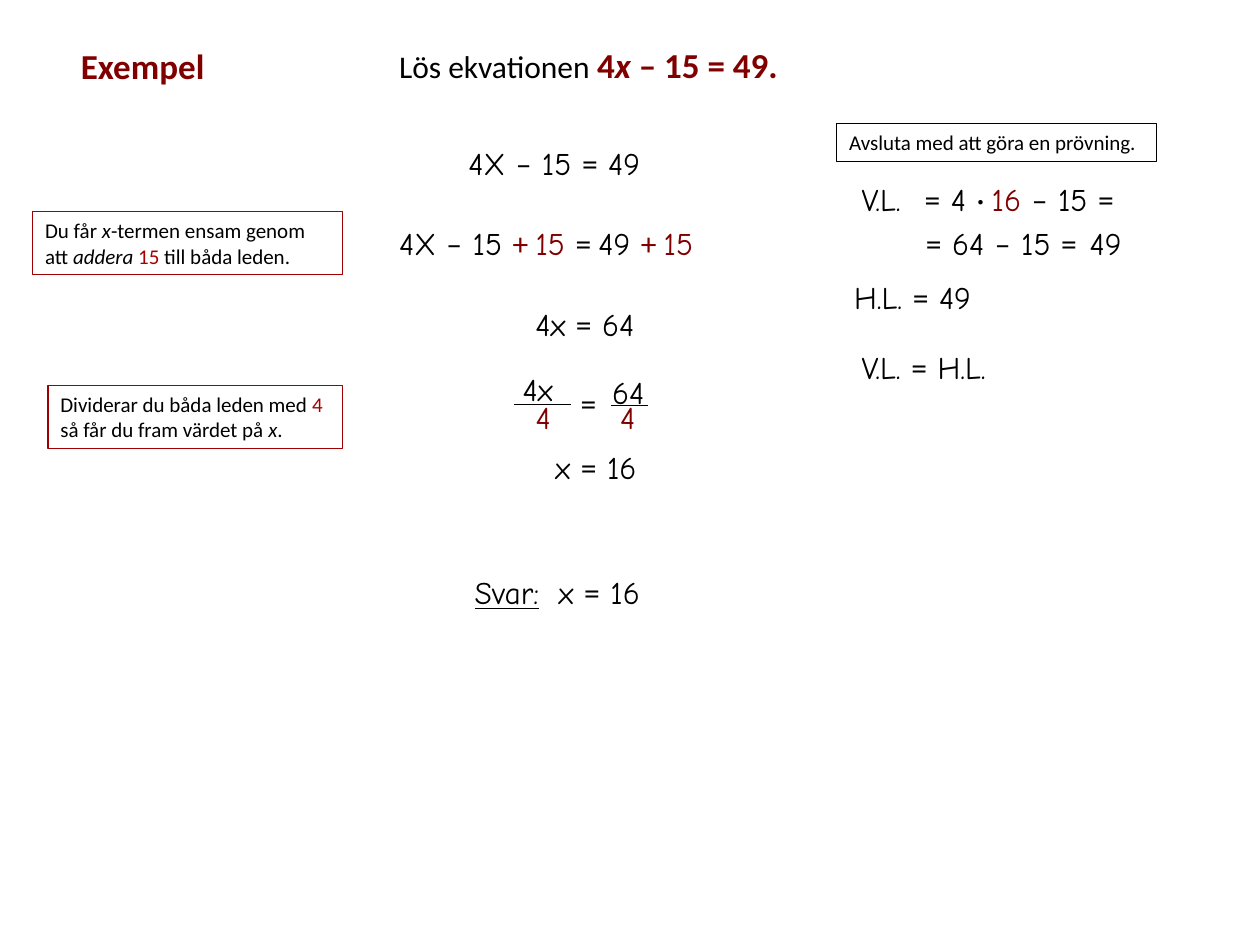
from lxml import etree
from pptx import Presentation
from pptx import util as u
from pptx.dml import color
from pptx.enum import shapes, text
from pptx.oxml import ns

COLORS = {"black": "000000", "maroon": "800000", "red": "A50002", "frame": "9F0002"}
PRINT, HAND = "Calibri", "Comic Neue"


def rgb(name):
    return color.RGBColor.from_string(COLORS[name])


def add_run(p, content, font=PRINT, size=18, ink="black",
            bold=False, italic=False, underline=False):
    r = p.add_run()
    r.text = content
    f = r.font
    f.name, f.size, f.color.rgb = font, u.Pt(size), rgb(ink)
    f.bold, f.italic, f.underline = bold, italic, underline


def set_frame(sp, wrap=True):
    """Prepare the text frame and return its first paragraph."""
    tf = sp.text_frame
    tf.word_wrap = wrap
    tf.auto_size = text.MSO_AUTO_SIZE.SHAPE_TO_FIT_TEXT
    tf.vertical_anchor = text.MSO_ANCHOR.TOP
    tf.margin_left = tf.margin_right = u.Pt(7.2)
    tf.margin_top = tf.margin_bottom = u.Pt(3.6)
    p = tf.paragraphs[0]
    p.alignment = text.PP_ALIGN.LEFT
    return p


def add_text(s, left, top, width, height=29, wrap=True):
    sp = s.shapes.add_textbox(u.Pt(left), u.Pt(top), u.Pt(width), u.Pt(height))
    return set_frame(sp, wrap)


def add_tab_stop(p, position):
    tabs = etree.SubElement(p._p.get_or_add_pPr(), ns.qn("a:tabLst"))
    etree.SubElement(tabs, ns.qn("a:tab"), pos=str(u.Pt(position)), algn="l")


def add_equation(s, left, top, width, *pieces, maroon=(), underlined=(),
                 tab=None, wrap=True):
    """Pieces alternate between handwriting and printed operators."""
    p = add_text(s, left, top, width, wrap=wrap)
    if tab:
        add_tab_stop(p, tab)
    for i, piece in enumerate(pieces):
        if piece:
            add_run(p, piece, font=PRINT if i % 2 else HAND,
                    ink="maroon" if i in maroon else "black",
                    underline=i in underlined)


def add_hint(s, left, top, width, height, *runs, frame="frame"):
    sp = s.shapes.add_shape(shapes.MSO_SHAPE.RECTANGLE, u.Pt(left), u.Pt(top),
                            u.Pt(width), u.Pt(height))
    sp.shadow.inherit = False
    sp.fill.background()
    sp.line.color.rgb, sp.line.width = rgb(frame), u.Pt(0.75)
    p = set_frame(sp)
    for content, style in runs:
        add_run(p, content, size=12, **style)


def add_bar(s, x1, x2, y):
    line = s.shapes.add_connector(shapes.MSO_CONNECTOR.STRAIGHT,
                                  u.Pt(x1), u.Pt(y), u.Pt(x2), u.Pt(y))
    line.line.color.rgb, line.line.width = rgb("black"), u.Pt(0.75)
    etree.SubElement(line._element.spPr, ns.qn("a:effectLst"))


def add_heading(s):
    title = s.shapes.title
    title.left, title.top = u.Pt(39), u.Pt(21.6)
    title.width, title.height = u.Pt(91.4), u.Pt(31.7)
    add_run(set_frame(title), "Exempel", size=20, ink="maroon", bold=True)

    p = add_text(s, 221, 21.6, 233.3, 31.7, wrap=False)
    add_run(p, "Lös ekvationen ")
    for content, italic in (("4", False), ("x", True), (" – 15 = 49.", False)):
        add_run(p, content, size=20, ink="maroon", bold=True, italic=italic)


def add_solution(s):
    add_equation(s, 260.6, 78.5, 150.5, "4X ", "–", " 15 ", "=", " 49")
    add_equation(s, 221, 124.6, 230.4, "4X ", "–", " 15 ", "+ ", "15 ", "= ",
                 "49 ", "+ ", "15", maroon=(3, 4, 7, 8))
    add_equation(s, 298.8, 170.6, 92.2, "4x ", "=", " 64")

    # Both sides divided by 4
    add_equation(s, 291.6, 208.1, 34.6, "4x", wrap=False)
    add_equation(s, 342.7, 209.5, 37.4, "64", wrap=False)
    for left in (293, 341.3):
        add_equation(s, left, 223.9, 31, " 4", maroon=(0,), wrap=False)
    add_equation(s, 324.7, 216, 22.3, "", "=")
    add_bar(s, 293.8, 326.2, 231)
    add_bar(s, 349.2, 370.1, 231.6)

    add_equation(s, 310.3, 252.7, 79.9, "x ", "=", " 16")

    # Answer
    add_equation(s, 264.2, 324, 180.7, "Svar:", "\t", "x ", "=", " 16",
                 underlined=(0,), tab=48)


def add_check(s):
    add_equation(s, 485.3, 99.4, 187.9, "V.L.\t", "=", " 4 ", "· ", "16 ",
                 "–", " 15 ", "=", maroon=(4,), tab=36)
    add_equation(s, 522, 124.6, 104.4, "", "=", " 64 ", "–", " 15 ", "=", wrap=False)
    add_equation(s, 615.6, 124.6, 36, "49", wrap=False)
    add_equation(s, 481, 155.5, 89.3, "H.L. ", "=", " 49", wrap=False)
    add_equation(s, 485.3, 195.1, 107.3, "V.L. ", "=", " H.L.")


def add_hints(s):
    plain, slanted, red = {}, {"italic": True}, {"ink": "red"}
    add_hint(s, 18.7, 121, 177.1, 36, ("Du får ", plain), ("x", slanted),
             ("-termen ensam genom att ", plain), ("addera ", slanted),
             ("15 ", red), ("till båda leden.", plain))
    add_hint(s, 27.4, 220.3, 168.5, 36, ("Dividerar du båda leden med ", plain),
             ("4 ", red), ("så får du fram värdet på ", plain),
             ("x", slanted), (".", plain))
    add_hint(s, 478.1, 70.6, 182.9, 21.6,
             ("Avsluta med att göra en prövning.", plain), frame="black")


def main():
    prs = Presentation()
    prs.slide_width, prs.slide_height = u.Pt(720), u.Pt(540)
    s = prs.slides.add_slide(prs.slide_layouts[5])
    add_heading(s)
    add_solution(s)
    add_check(s)
    add_hints(s)
    prs.save("out.pptx")


if __name__ == "__main__":
    main()
